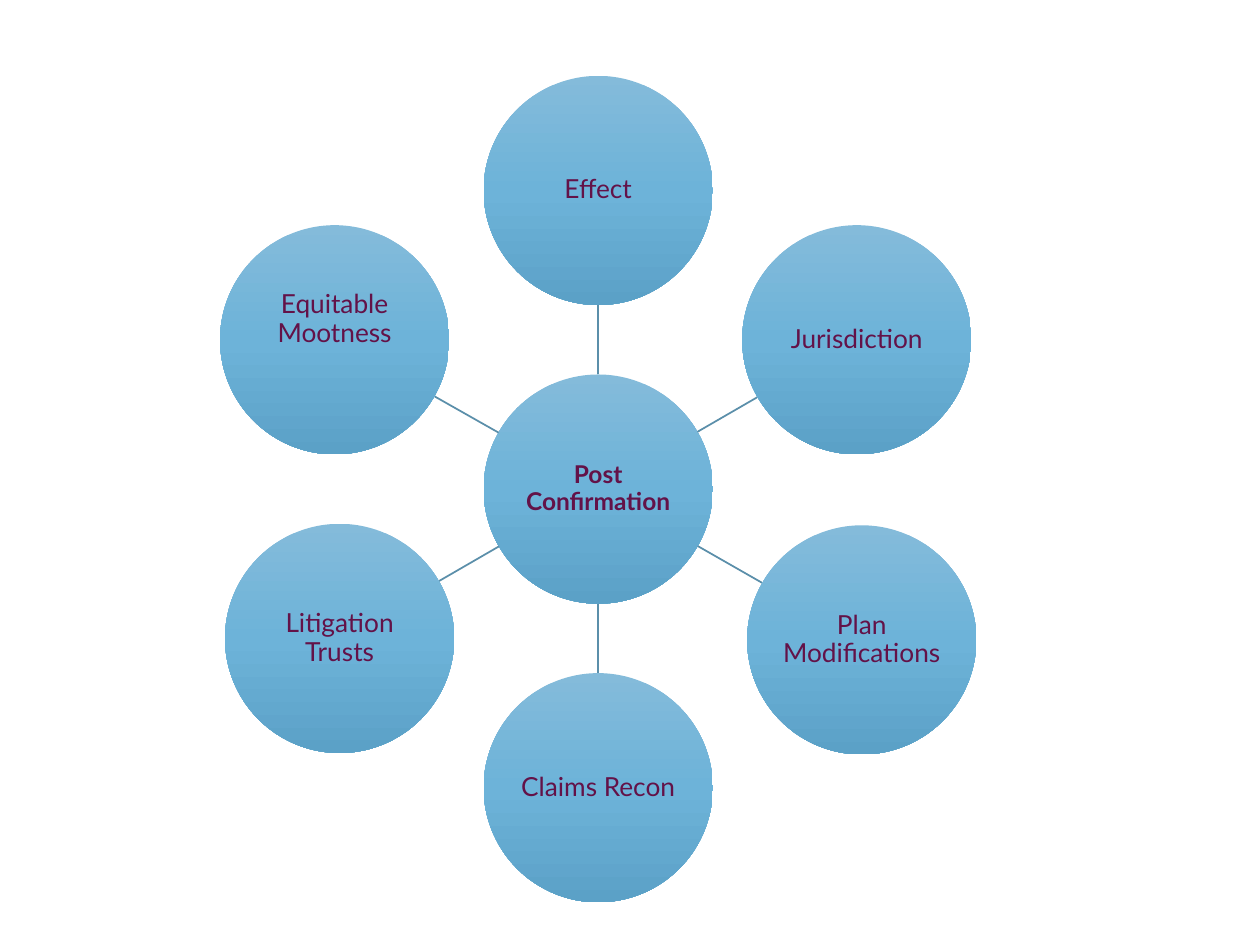
from copy import deepcopy
from dataclasses import dataclass
from math import cos, hypot, radians, sin

from pptx import Presentation
from pptx.dml.color import RGBColor
from pptx.enum.shapes import MSO_CONNECTOR, MSO_SHAPE
from pptx.enum.text import MSO_ANCHOR, PP_ALIGN
from pptx.oxml.ns import qn
from pptx.util import Cm, Pt


@dataclass(frozen=True)
class Theme:
    font: str = "Lato"
    text: str = "631248"
    spoke: str = "5B8FAA"
    gradient: tuple = ((0, "84BBDA"), (0.5, "6DB3D9"), (1, "5BA1C7"))
    hub_size: int = 14
    topic_size: int = 15


THEME = Theme()

# All lengths in centimetres
RADIUS = 2.31
ORBIT = 6.02
HUB = (12.06, 9.86)
INSET = 0.03

# Topics clockwise from the top: text, nudge from the even ring, bottom inset
TOPICS = [
    ("Effect", (0, 0), INSET),
    ("Jurisdiction", (0, 0), INSET),
    ("Plan Modifications", (0.1, 0.03), INSET),
    ("Claims Recon", (0, 0), INSET),
    ("Litigation Trusts", (0, 0), INSET),
    ("Equitable Mootness", (-0.1, 0), 0.85),
]


def write_text(shape, text, size, bold=False, bottom=INSET):
    frame = shape.text_frame
    frame.word_wrap = True
    frame.vertical_anchor = MSO_ANCHOR.MIDDLE
    frame.margin_left = frame.margin_right = frame.margin_top = Cm(INSET)
    frame.margin_bottom = Cm(bottom)
    paragraph = frame.paragraphs[0]
    paragraph.alignment = PP_ALIGN.CENTER
    paragraph.line_spacing = 0.9
    run = paragraph.add_run()
    run.text = text
    run.font.name = THEME.font
    run.font.size = Pt(size)
    run.font.bold = bold
    run.font.color.rgb = RGBColor.from_string(THEME.text)


def fill_gradient(shape):
    """Fill from top to bottom with the theme's three stops."""
    shape.fill.gradient()
    shape.fill.gradient_angle = 270
    stop_list = shape._element.spPr.find(".//" + qn("a:gsLst"))
    stop_list.append(deepcopy(stop_list[0]))
    for stop, (position, color) in zip(shape.fill.gradient_stops, THEME.gradient):
        stop.position = position
        stop.color.rgb = RGBColor.from_string(color)


def add_circle(slide, center, text, **text_format):
    x, y = center
    circle = slide.shapes.add_shape(
        MSO_SHAPE.OVAL, Cm(x - RADIUS), Cm(y - RADIUS), Cm(2 * RADIUS), Cm(2 * RADIUS))
    circle.shadow.inherit = False
    circle.line.fill.background()
    fill_gradient(circle)
    write_text(circle, text, **text_format)


def add_spoke(slide, start, end):
    """Join two circles, given by their centers, from rim to rim."""
    dx, dy = end[0] - start[0], end[1] - start[1]
    share = RADIUS / hypot(dx, dy)
    rim_x, rim_y = dx * share, dy * share
    spoke = slide.shapes.add_connector(
        MSO_CONNECTOR.STRAIGHT,
        Cm(start[0] + rim_x), Cm(start[1] + rim_y),
        Cm(end[0] - rim_x), Cm(end[1] - rim_y))
    spoke.line.color.rgb = RGBColor.from_string(THEME.spoke)
    spoke.line.width = Pt(1)
    properties = spoke._element.spPr
    properties.append(properties.makeelement(qn("a:effectLst"), {}))


def ring_center(index, nudge):
    angle = radians(360 / len(TOPICS) * index - 90)
    return (HUB[0] + ORBIT * cos(angle) + nudge[0],
            HUB[1] + ORBIT * sin(angle) + nudge[1])


def main():
    presentation = Presentation()
    presentation.slide_width = Cm(25.4)
    presentation.slide_height = Cm(19.05)
    slide = presentation.slides.add_slide(presentation.slide_layouts[6])

    add_circle(slide, HUB, "Post Confirmation", size=THEME.hub_size, bold=True)
    for index, (text, nudge, bottom) in enumerate(TOPICS):
        center = ring_center(index, nudge)
        add_spoke(slide, HUB, center)
        add_circle(slide, center, text, size=THEME.topic_size, bottom=bottom)

    presentation.save("out.pptx")


if __name__ == "__main__":
    main()
